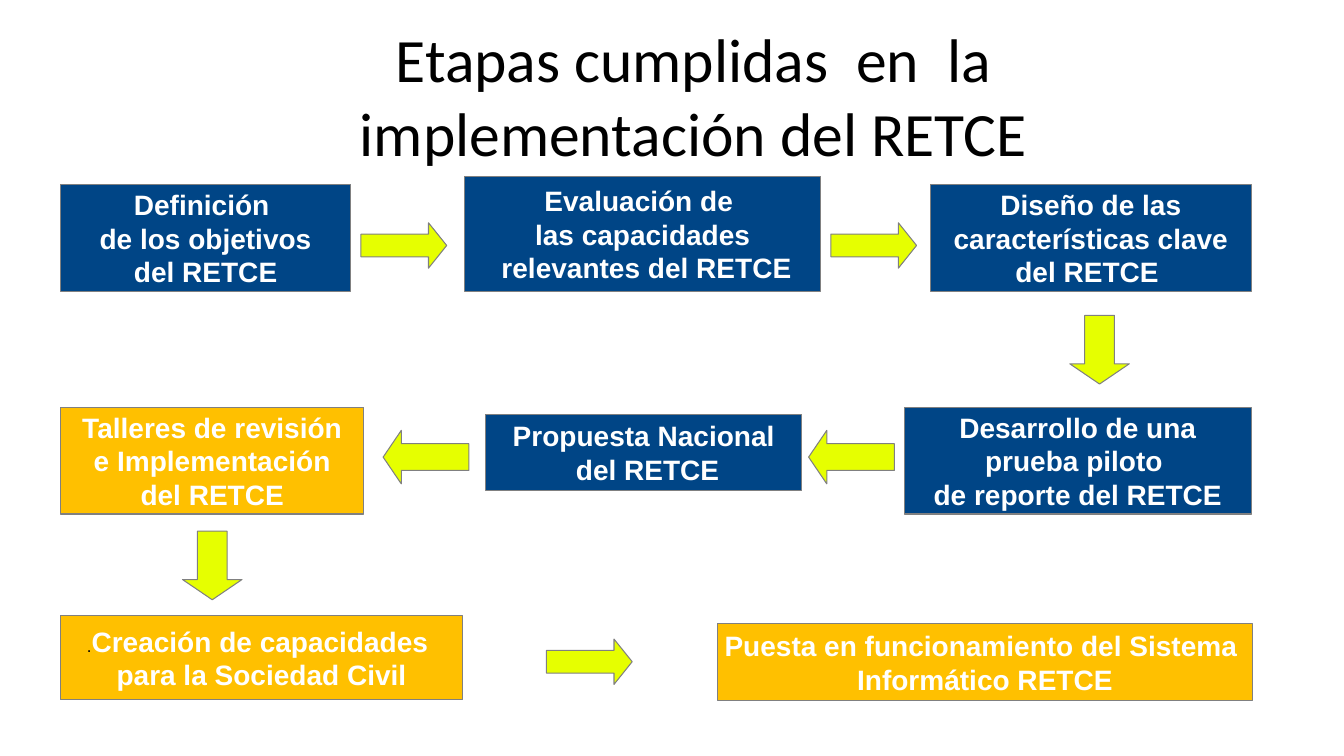
from pptx import Presentation
from pptx.dml.color import RGBColor
from pptx.enum.shapes import MSO_SHAPE as Shape
from pptx.enum.text import MSO_ANCHOR as Anchor, PP_ALIGN as Align
from pptx.util import Inches, Pt

BLUE = RGBColor(0x00, 0x45, 0x86)
AMBER = RGBColor(0xFF, 0xC0, 0x00)
LIME = RGBColor(0xE6, 0xFF, 0x00)
GREY = RGBColor(0x80, 0x80, 0x80)
WHITE = RGBColor(0xFF, 0xFF, 0xFF)
BLACK = RGBColor(0x00, 0x00, 0x00)

WIDTH, HEIGHT = Inches(13.33), Inches(7.5)

# Stages: left, top, width, height (percent of the slide), fill, lines
STAGES = [
    (4.5, 24.4, 21.6, 14.13, BLUE,
     ["Definición ", "de los objetivos", "del RETCE"]),
    (34.58, 23.33, 26.48, 15.2, BLUE,
     ["Evaluación de ", "las capacidades", " relevantes del RETCE"]),
    (69.24, 24.4, 23.86, 14.13, BLUE,
     ["Diseño de las", "características clave", "del RETCE "]),
    (67.29, 53.87, 25.81, 14.13, BLUE,
     ["Desarrollo de una", "prueba piloto ", "de reporte del RETCE"]),
    (36.16, 54.8, 23.48, 10.13, BLUE,
     ["Propuesta Nacional", " del RETCE"]),
    (4.5, 53.87, 22.58, 14.13, AMBER,
     ["Talleres de revisión", " e Implementación ", "del RETCE"]),
    (4.5, 81.47, 29.93, 11.07, AMBER,
     ["Creación de capacidades ", "para la Sociedad Civil"]),
    (53.41, 82.53, 39.76, 10.13, AMBER,
     ["Puesta en funcionamiento del Sistema ", "Informático RETCE"]),
]
DOTTED_STAGE = 6  # the stage whose text opens with a small dot

# Arrow kinds: preset, width, height (percent), head length
RIGHT = (Shape.RIGHT_ARROW, 6.38, 6, 0.4)
LEFT = (Shape.LEFT_ARROW, 6.38, 7.07, 0.34)
DOWN = (Shape.DOWN_ARROW, 4.43, 9.07, 0.34)

# Arrows in reading order: kind, left, top (percent)
ARROWS = [
    (RIGHT, 26.86, 29.47), (RIGHT, 61.82, 29.47), (DOWN, 79.6, 41.73),
    (LEFT, 60.17, 56.93), (LEFT, 28.51, 56.93), (DOWN, 13.58, 70.27),
    (RIGHT, 40.66, 84.53),
]


def place(left, top, width, height):
    """Turn percentages of the slide into lengths."""
    return (int(WIDTH * left / 100), int(HEIGHT * top / 100),
            int(WIDTH * width / 100), int(HEIGHT * height / 100))


def style_run(r, size, color, font="Arial", bold=False):
    r.font.name = font
    r.font.size = Pt(size)
    r.font.bold = bold
    r.font.color.rgb = color


def add_filled(slide, preset, box, fill):
    sp = slide.shapes.add_shape(preset, *place(*box))
    sp.shadow.inherit = False
    sp.fill.solid()
    sp.fill.fore_color.rgb = fill
    sp.line.color.rgb = GREY
    sp.line.width = Pt(0.75)
    return sp


def add_title(slide, text):
    tf = slide.shapes.add_textbox(*place(17.85, 2.13, 67.52, 20.93)).text_frame
    tf.word_wrap = True
    tf.vertical_anchor = Anchor.MIDDLE
    p = tf.paragraphs[0]
    p.text = text
    p.alignment = Align.CENTER
    style_run(p.runs[0], 44, BLACK, font="Calibri")


def add_stage(slide, box, fill, lines, dotted):
    tf = add_filled(slide, Shape.RECTANGLE, box, fill).text_frame
    tf.word_wrap = False
    tf.vertical_anchor = Anchor.MIDDLE
    for i, line in enumerate(lines):
        p = tf.add_paragraph() if i else tf.paragraphs[0]
        p.alignment = Align.CENTER
        if dotted and i == 0:
            r = p.add_run()
            r.text = "."
            style_run(r, 12, BLACK)
        r = p.add_run()
        r.text = line
        style_run(r, 20, WHITE, bold=True)


def add_arrow(slide, kind, left, top):
    preset, width, height, head = kind
    sp = add_filled(slide, preset, (left, top, width, height), LIME)
    sp.adjustments[0] = 0.5
    sp.adjustments[1] = head


def main():
    prs = Presentation()
    prs.slide_width, prs.slide_height = WIDTH, HEIGHT
    slide = prs.slides.add_slide(prs.slide_layouts[6])

    add_title(slide, "Etapas cumplidas  en  la implementación del RETCE")
    for i, (*box, fill, lines) in enumerate(STAGES):
        add_stage(slide, box, fill, lines, i == DOTTED_STAGE)
    for kind, left, top in ARROWS:
        add_arrow(slide, kind, left, top)

    prs.save("out.pptx")


if __name__ == "__main__":
    main()
